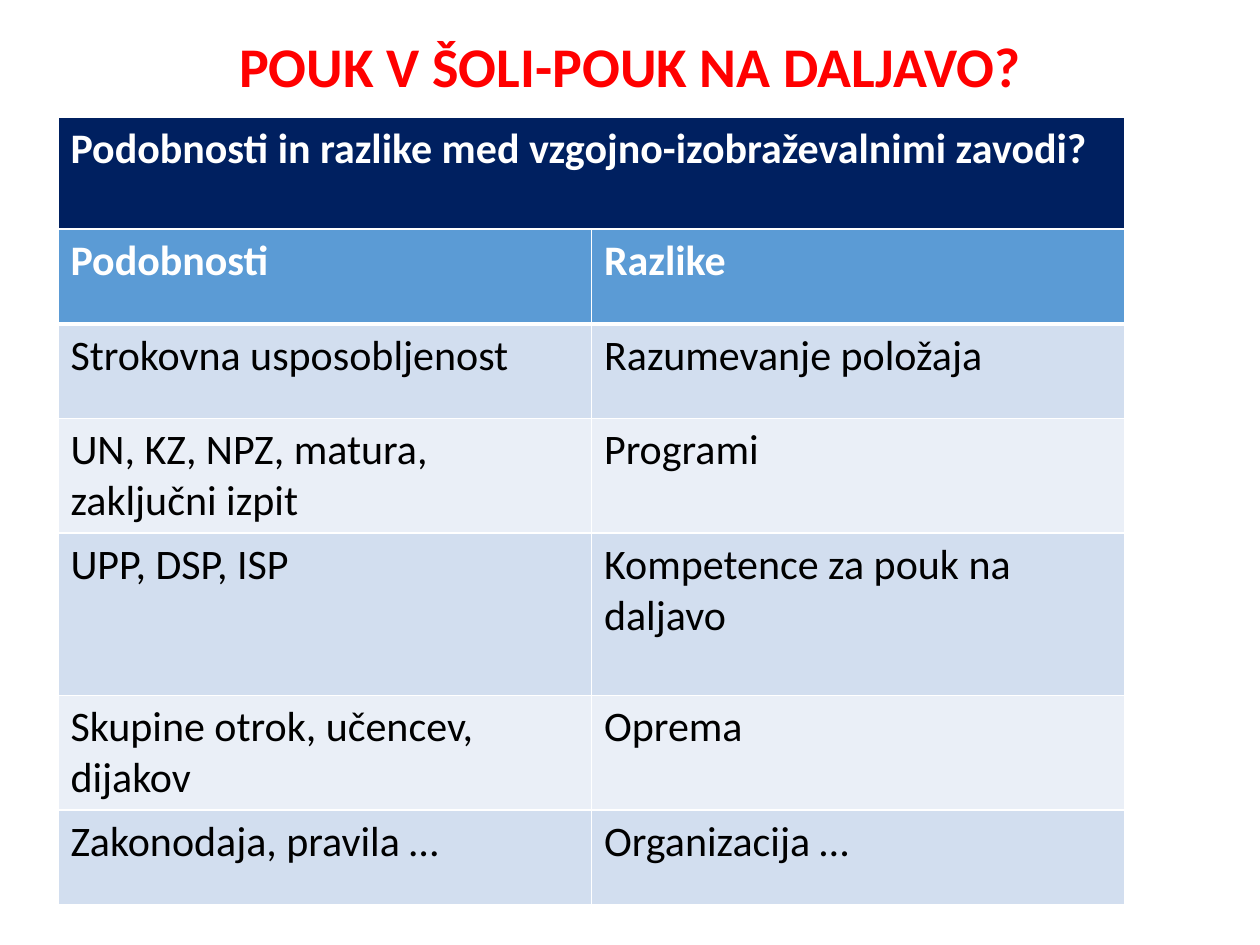
from lxml import etree
from pptx import Presentation
from pptx.dml.color import RGBColor
from pptx.enum.text import MSO_ANCHOR, PP_ALIGN
from pptx.oxml.ns import qn
from pptx.util import Inches, Pt

MIDDLE = MSO_ANCHOR.MIDDLE
CENTER = PP_ALIGN.CENTER

COLORS = {
    "title": "FF0000",
    "banner": "002060",
    "header": "5B9BD5",
    "odd": "D2DEEF",
    "even": "EAEFF7",
    "white": "FFFFFF",
    "text": "000000",
}
COMPARISON = [
    (0.75, "Podobnosti", "Razlike"),
    (0.75, "Strokovna usposobljenost", "Razumevanje položaja"),
    (0.91, "UN, KZ, NPZ, matura, zaključni izpit", "Programi"),
    (1.29, "UPP, DSP, ISP", "Kompetence za pouk na daljavo"),
    (0.91, "Skupine otrok, učencev, dijakov", "Oprema"),
    (0.75, "Zakonodaja, pravila …", "Organizacija …"),
]


class SlideBuilder:
    """Adds styled titles and tables to one slide."""

    font = "Calibri"

    def __init__(self, slide):
        self.slide = slide

    def color(self, name):
        return RGBColor.from_string(COLORS[name])

    def run(self, p, text, size, color, bold):
        r = p.add_run()
        r.text = text
        r.font.name = self.font
        r.font.size = Pt(size)
        r.font.bold = bold
        r.font.color.rgb = self.color(color)

    def title(self, text, left, top, width, height):
        sp = self.slide.shapes.add_textbox(
            Inches(left), Inches(top), Inches(width), Inches(height))
        tf = sp.text_frame
        tf.word_wrap = True
        tf.vertical_anchor = MIDDLE
        p = tf.paragraphs[0]
        p.alignment = CENTER
        p.line_spacing = 0.9
        self.run(p, text, 32, "title", True)

    def borders(self, cell, bottom):
        tc_pr = cell._tc.get_or_add_tcPr()
        for side, width in (("L", 1), ("R", 1), ("T", 1), ("B", bottom)):
            ln = etree.SubElement(tc_pr, qn(f"a:ln{side}"), w=str(Pt(width)))
            fill = etree.SubElement(ln, qn("a:solidFill"))
            etree.SubElement(fill, qn("a:srgbClr"), val=COLORS["white"])

    def table(self, rows, left, top, width, header_fill):
        columns = len(rows[0]) - 1
        height = sum(row[0] for row in rows)
        table = self.slide.shapes.add_table(
            len(rows), columns, Inches(left), Inches(top),
            Inches(width), Inches(height)).table
        for i, (row_height, *texts) in enumerate(rows):
            table.rows[i].height = Inches(row_height)
            header = i == 0
            fill = header_fill if header else ("odd" if i % 2 else "even")
            for j, text in enumerate(texts):
                cell = table.cell(i, j)
                self.borders(cell, 3 if header else 1)
                if i == 1:
                    cell._tc.tcPr.find(qn("a:lnT")).set("w", str(Pt(3)))
                cell.fill.solid()
                cell.fill.fore_color.rgb = self.color(fill)
                self.run(cell.text_frame.paragraphs[0], text, 24,
                         "white" if header else "text", header)


def main():
    prs = Presentation()
    prs.slide_width = Inches(10)
    prs.slide_height = Inches(7.5)
    s = SlideBuilder(prs.slides.add_slide(prs.slide_layouts[6]))
    s.title("POUK V ŠOLI-POUK NA DALJAVO?", 0.69, 0.18, 8.62, 0.74)
    banner = [(0.9, "Podobnosti in razlike med vzgojno-izobraževalnimi zavodi?")]
    s.table(banner, 0.46, 0.93, 8.47, "banner")
    s.table(COMPARISON, 0.46, 1.82, 8.47, "header")
    prs.save("out.pptx")


if __name__ == "__main__":
    main()
